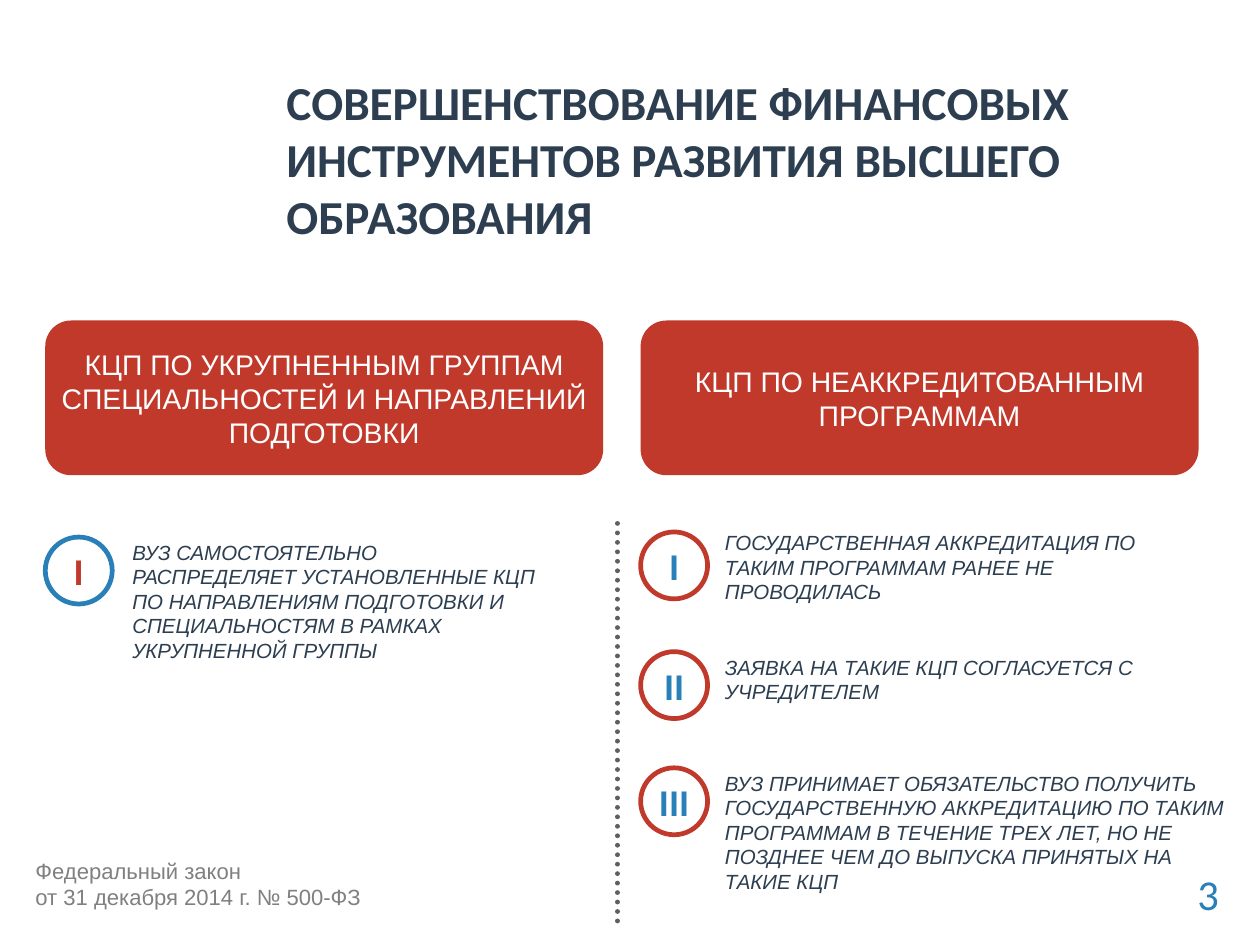
from dataclasses import dataclass

from lxml.etree import SubElement
from pptx import Presentation
from pptx.dml.color import RGBColor
from pptx.enum.dml import MSO_LINE
from pptx.enum.shapes import MSO_CONNECTOR, MSO_SHAPE
from pptx.enum.text import MSO_ANCHOR, PP_ALIGN
from pptx.oxml.ns import qn
from pptx.util import Pt


@dataclass(frozen=True)
class Theme:
    red: str = "C0392B"
    blue: str = "2980B9"
    navy: str = "2C3E50"
    gray: str = "808080"
    dots: str = "5F5F5F"
    white: str = "FFFFFF"
    heading_font: str = "Calibri"
    body_font: str = "Arial"
    title: int = 60
    number: int = 54
    mark: int = 48
    header: int = 36
    source: int = 28
    note: int = 26
    stroke: int = 6


@dataclass(frozen=True)
class Box:
    left: float
    top: float
    width: float
    height: float

    def lengths(self):
        return [Pt(v) for v in (self.left, self.top, self.width, self.height)]


T = Theme()
MARK_SIZE = 85
HEADER_HEIGHT = 196.5
NOTE_INDENT = 34.5


def rgb(color):
    return RGBColor.from_string(color)


def write(sp, text, *, size, color, font=T.body_font, bold=False, italic=False,
          align=PP_ALIGN.LEFT, anchor=MSO_ANCHOR.TOP, wrap=True, indent=0):
    """Fill the shape with one paragraph per line of text."""
    tf = sp.text_frame
    tf.word_wrap = wrap
    tf.vertical_anchor = anchor
    for i, line in enumerate(text.split("\n")):
        p = tf.add_paragraph() if i else tf.paragraphs[0]
        p.alignment = align
        if indent:
            p._p.get_or_add_pPr().set("marL", str(Pt(indent)))
        r = p.add_run()
        r.text = line
        r.font.name = font
        r.font.size = Pt(size)
        r.font.bold = bold
        r.font.italic = italic
        r.font.color.rgb = rgb(color)


def add_text(s, box, text, **fmt):
    write(s.shapes.add_textbox(*box.lengths()), text, **fmt)


def add_panel(s, kind, box, text, *, fill=None, line=None, **fmt):
    """Add a preset shape with centred text."""
    sp = s.shapes.add_shape(kind, *box.lengths())
    sp.shadow.inherit = False
    if fill:
        sp.fill.solid()
        sp.fill.fore_color.rgb = rgb(fill)
    else:
        sp.fill.background()
    if line:
        sp.line.color.rgb = rgb(line)
        sp.line.width = Pt(T.stroke)
    else:
        sp.line.fill.background()
    write(sp, text, align=PP_ALIGN.CENTER, anchor=MSO_ANCHOR.MIDDLE, **fmt)


def add_column(s, box, header, notes, *, ring, numeral, note_offset):
    """Header and numbered notes: (mark top, note top, note width, note height, text)."""
    add_panel(s, MSO_SHAPE.ROUNDED_RECTANGLE,
              Box(box.left, box.top, box.width, HEADER_HEIGHT), header,
              fill=T.red, size=T.header, color=T.white)
    for i, (mark_top, note_top, width, height, text) in enumerate(notes, 1):
        add_panel(s, MSO_SHAPE.OVAL,
                  Box(box.left, box.top + mark_top, MARK_SIZE, MARK_SIZE), "I" * i,
                  line=ring, size=T.mark, color=numeral,
                  font=T.heading_font, bold=True)
        add_text(s, Box(box.left + note_offset, box.top + note_top, width, height),
                 text, size=T.note, color=T.navy, italic=True, indent=NOTE_INDENT)


def add_divider(s, box):
    c = s.shapes.add_connector(MSO_CONNECTOR.STRAIGHT, Pt(box.left),
                               Pt(box.top + box.height), Pt(box.left), Pt(box.top))
    c.line.color.rgb = rgb(T.dots)
    c.line.width = Pt(T.stroke)
    c.line.dash_style = MSO_LINE.ROUND_DOT
    spPr = c._element.spPr
    spPr.find(qn("a:ln")).set("cap", "rnd")
    SubElement(spPr, qn("a:effectLst"))


def add_footer(s, box):
    add_text(s, Box(box.left, box.top, 712, 75),
             "Федеральный закон\nот 31 декабря 2014 г. № 500-ФЗ",
             size=T.source, color=T.gray)
    add_text(s, Box(box.left + box.width - 42.5, box.top + 13.5, 42.5, 73), "3",
             size=T.number, color=T.blue, font=T.heading_font, wrap=False)


def main():
    prs = Presentation()
    prs.slide_width, prs.slide_height = Pt(1600), Pt(1200)
    s = prs.slides.add_slide(prs.slide_layouts[6])

    add_text(s, Box(356.5, 90, 1130, 225),
             "СОВЕРШЕНСТВОВАНИЕ ФИНАНСОВЫХ ИНСТРУМЕНТОВ РАЗВИТИЯ ВЫСШЕГО ОБРАЗОВАНИЯ",
             size=T.title, color=T.navy, font=T.heading_font, bold=True)
    add_column(
        s, Box(57.5, 407, 708.5, 762),
        "КЦП ПО УКРУПНЕННЫМ ГРУППАМ СПЕЦИАЛЬНОСТЕЙ И НАПРАВЛЕНИЙ ПОДГОТОВКИ",
        [(275, 275, 564.5, 163.5,
          "ВУЗ САМОСТОЯТЕЛЬНО РАСПРЕДЕЛЯЕТ УСТАНОВЛЕННЫЕ КЦП ПО НАПРАВЛЕНИЯМ "
          "ПОДГОТОВКИ И СПЕЦИАЛЬНОСТЯМ В РАМКАХ УКРУПНЕННОЙ ГРУППЫ")],
        ring=T.blue, numeral=T.red, note_offset=69)
    add_column(
        s, Box(813.5, 407, 708.5, 762),
        "КЦП ПО НЕАККРЕДИТОВАННЫМ ПРОГРАММАМ",
        [(268.5, 262.5, 643, 101,
          "ГОСУДАРСТВЕННАЯ АККРЕДИТАЦИЯ ПО ТАКИМ ПРОГРАММАМ РАНЕЕ НЕ ПРОВОДИЛАСЬ"),
         (420.5, 421, 643, 70,
          "ЗАЯВКА НА ТАКИЕ КЦП СОГЛАСУЕТСЯ С УЧРЕДИТЕЛЕМ"),
         (568, 568, 695, 194.5,
          "ВУЗ ПРИНИМАЕТ ОБЯЗАТЕЛЬСТВО ПОЛУЧИТЬ ГОСУДАРСТВЕННУЮ АККРЕДИТАЦИЮ ПО "
          "ТАКИМ ПРОГРАММАМ В ТЕЧЕНИЕ ТРЕХ ЛЕТ, НО НЕ ПОЗДНЕЕ ЧЕМ ДО ВЫПУСКА "
          "ПРИНЯТЫХ НА ТАКИЕ КЦП")],
        ring=T.red, numeral=T.blue, note_offset=65.5)
    add_divider(s, Box(784, 656.5, 0, 513))
    add_footer(s, Box(38, 1085, 1518, 87))

    prs.save("out.pptx")


if __name__ == "__main__":
    main()
